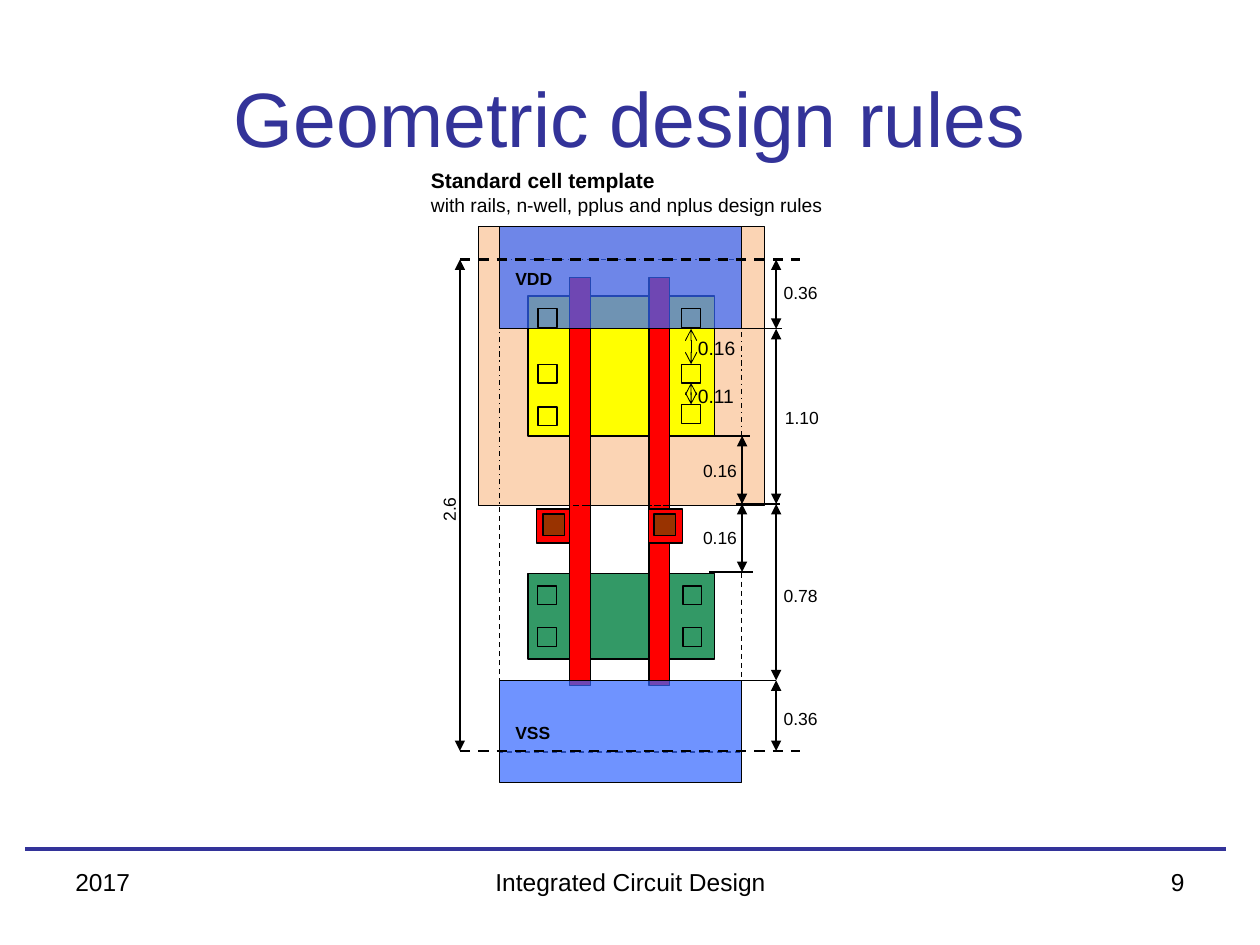
from dataclasses import dataclass
from itertools import pairwise, product

from lxml import etree
from pptx import Presentation
from pptx import util as u
from pptx.dml.color import RGBColor
from pptx.enum import dml, shapes, text
from pptx.oxml.ns import qn

COLS, ROWS = 100, 75


@dataclass(frozen=True)
class Theme:
    font: str = "Arial"
    navy: str = "333399"
    black: str = "000000"
    well: str = "FBD4B4"
    red: str = "FF0000"
    yellow: str = "FFFF00"
    green: str = "339966"
    blue: str = "3366FF"
    brown: str = "993300"
    title: int = 44
    footer: int = 14
    head: int = 12
    note: int = 11
    label: int = 10
    hair: float = 0.5
    thin: float = 0.75
    thick: float = 1.5
    rule: float = 2.25


class Canvas:
    def __init__(self, deck, theme):
        self.theme = theme
        self.slide = deck.slides.add_slide(deck.slide_layouts[6])
        self.col = deck.slide_width / COLS
        self.row = deck.slide_height / ROWS

    def place(self, *spots):
        units = (self.col, self.row) * 2
        return [u.Emu(round(spot * unit)) for spot, unit in zip(spots, units)]

    def pen(self, line, color, width, dash):
        line.color.rgb = RGBColor.from_string(color)
        line.width = u.Pt(width)
        if dash:
            line.dash_style = dash

    def rect(self, x, y, w, h, fill=None, alpha=None, dash=None):
        shape = self.slide.shapes.add_shape(
            shapes.MSO_SHAPE.RECTANGLE, *self.place(x, y, w, h))
        shape.shadow.inherit = False
        if fill:
            shape.fill.solid()
            shape.fill.fore_color.rgb = RGBColor.from_string(fill)
        else:
            shape.fill.background()
        if alpha:
            color = shape._element.spPr.find(qn("a:solidFill")).find(qn("a:srgbClr"))
            etree.SubElement(color, qn("a:alpha"), val=str(alpha * 1000))
        self.pen(shape.line, self.theme.black, self.theme.thin, dash)
        return shape

    def line(self, x1, y1, x2, y2, color=None, width=None, dash=None,
             arrow=None, start=None, end=None):
        wire = self.slide.shapes.add_connector(
            shapes.MSO_CONNECTOR.STRAIGHT, *self.place(x1, y1, x2, y2))
        self.pen(wire.line, color or self.theme.black,
                 width or self.theme.thin, dash)
        if arrow:
            for tag in ("a:headEnd", "a:tailEnd"):
                etree.SubElement(wire.line._get_or_add_ln(), qn(tag), type=arrow)
        etree.SubElement(wire._element.spPr, qn("a:effectLst"))
        if start:
            wire.begin_connect(*start)
        if end:
            wire.end_connect(*end)

    def text(self, x, y, w, h, runs, color=None, align=text.PP_ALIGN.LEFT,
             inset=(0.1, 0.05), middle=False, turn=None):
        box = self.slide.shapes.add_textbox(*self.place(x, y, w, h))
        frame = box.text_frame
        frame.word_wrap = True
        frame.margin_left = frame.margin_right = u.Inches(inset[0])
        frame.margin_top = frame.margin_bottom = u.Inches(inset[1])
        if middle:
            frame.vertical_anchor = text.MSO_ANCHOR.MIDDLE
        if turn:
            frame._txBody.bodyPr.set("vert", turn)
        for i, (words, size, bold) in enumerate(runs):
            para = frame.add_paragraph() if i else frame.paragraphs[0]
            para.alignment = align
            run = para.add_run()
            run.text = words
            run.font.name = self.theme.font
            run.font.size = u.Pt(size)
            run.font.bold = bold
            run.font.color.rgb = RGBColor.from_string(color or self.theme.black)

    def label(self, x, y, w, h, words, bold=False, turn=None):
        self.text(x, y, w, h, [(words, self.theme.label, bold)],
                  inset=(0.07, 0.04), turn=turn)


def frame(art, theme):
    align = text.PP_ALIGN
    art.line(2, 67.4, 97.3, 67.4, theme.navy, theme.rule)
    art.text(5, 3, 90, 12.5, [("Geometric design rules", theme.title, False)],
             theme.navy, align.CENTER, middle=True)
    for x, w, words, side in (
            (5, 23.3, "2017", align.LEFT),
            (34.2, 31.7, "Integrated Circuit Design", align.CENTER),
            (71.7, 23.3, "9", align.RIGHT)):
        art.text(x, 68.3, w, 5.2, [(words, theme.footer, False)], align=side)
    art.text(34.1, 12.9, 31.8, 5.2, [
        ("Standard cell template", theme.head, True),
        ("with rails, n-well, pplus and nplus design rules", theme.note, False),
    ], inset=(0.01, 0.04))


def cell(art, theme):
    pad = 2.7
    art.rect(38, 18, 22.7, 22.1, theme.well)
    art.rect(42.6, 40.4, pad, pad, theme.red)
    art.rect(41.9, 23.5, 14.8, 11.1, theme.yellow)
    art.rect(41.9, 45.5, 14.8, 6.8, theme.green)
    for x in (45.2, 51.5):
        art.rect(x, 22, 1.65, 32.4, theme.red)
    art.rect(51.5, 40.4, pad, pad, theme.red)
    art.rect(39.65, 40.1, 19.2, 19.6, dash=dml.MSO_LINE.DASH)
    art.rect(39.65, 20.6, 19.2, 19.5, dash=dml.MSO_LINE.DASH_DOT)
    for y, name, top in ((18, "VDD", 20.9), (54, "VSS", 56.9)):
        art.rect(39.65, y, 19.2, 8.1, theme.blue, alpha=70)
        art.label(40.2, top, 6.1, 3.6, name, bold=True)
    for x in (43.1, 51.9):
        art.rect(x, 40.8, 1.7, 1.7, theme.brown)


def vias(art, theme):
    side = 1.5
    for x, y in product((42.65, 54.2), (46.5, 49.8)):
        art.rect(x, y, side, side)
    for y in (24.5, 28.9, 32.3):
        art.rect(42.7, y, side, side)
    art.rect(54.1, 24.5, side, side)
    upper, lower = (art.rect(54.1, y, side, side) for y in (28.9, 32.1))
    mid = 54.1 + side / 2
    style = dict(width=theme.hair, arrow="arrow")
    art.line(mid, 28.9, mid, 26.1, start=(upper, 0), **style)
    art.line(mid, 32.1, mid, 30.4, start=(lower, 0), end=(upper, 2), **style)
    for y, words in ((26.2, "0.16"), (30, "0.11")):
        art.text(54.4, y, 5.7, 3.2, [(words, theme.note, False)])


def sizes(art, theme):
    top, base = 20.6, 59.6
    for y in (top, base):
        art.line(36.5, y, 63.5, y, width=theme.thick, dash=dml.MSO_LINE.DASH)
    spans = [(36.5, top, base)]
    spans += [(61.6, *pair) for pair in pairwise((top, 26.1, 40, 54, base))]
    spans += [(58.9, *pair) for pair in pairwise((34.6, 40, 45.4))]
    for x, y1, y2 in spans:
        art.line(x, y1, x, y2, arrow="triangle")
    for x, y in ((56, 34.6), (56.3, 45.4), (58.6, 26.1), (58.4, 40), (58.1, 54)):
        art.line(x, y, x + 3.5, y)
    for x, y, words in ((55.1, 36.1, "0.16"), (55.1, 41.4, "0.16"),
                        (61.5, 22, "0.36"), (61.6, 31.9, "1.10"),
                        (61.5, 46, "0.78"), (61.5, 55.8, "0.36")):
        art.label(x, y, 5, 2.4, words)
    art.label(34.1, 36.8, 3.9, 5, "2.6", turn="vert270")


def main():
    deck = Presentation()
    deck.slide_width, deck.slide_height = u.Inches(10), u.Inches(7.5)
    theme = Theme()
    art = Canvas(deck, theme)
    for draw in (frame, cell, vias, sizes):
        draw(art, theme)
    deck.save("out.pptx")


if __name__ == "__main__":
    main()
